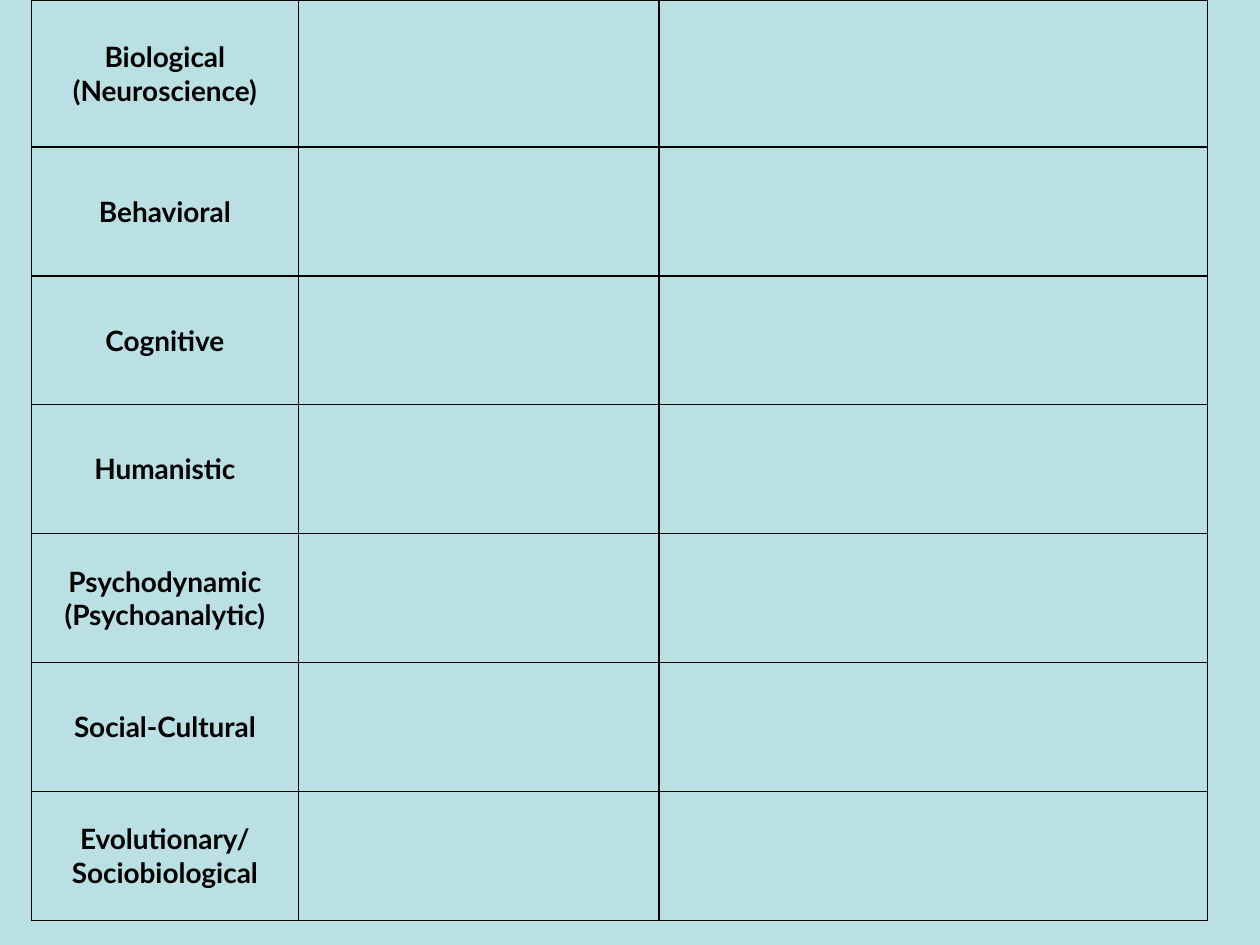
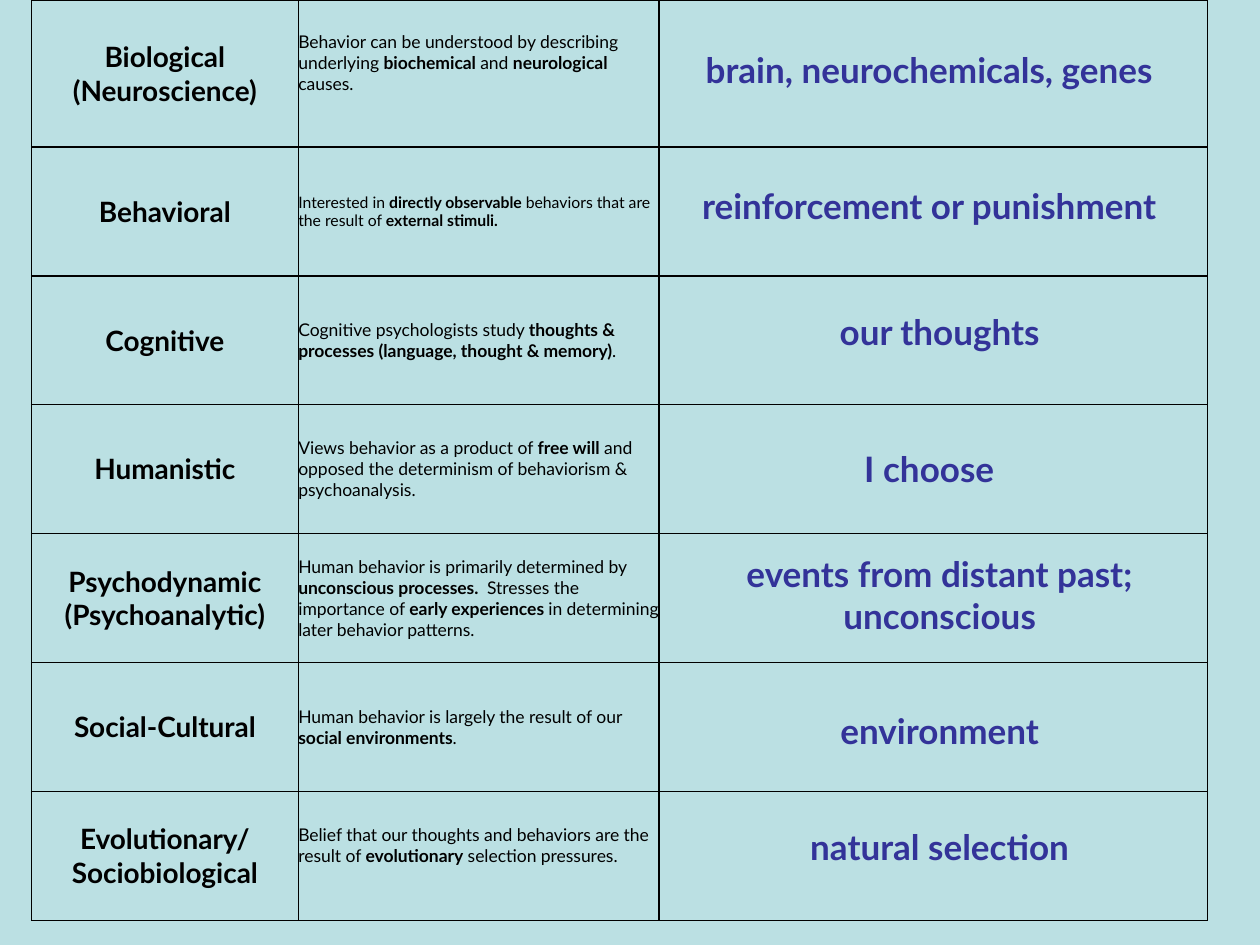
from lxml import etree
from pptx import Presentation
from pptx.dml.color import RGBColor
from pptx.enum import text
from pptx.oxml import ns
from pptx.util import Pt

FONT = "Lato"
BACKGROUND, INK, ACCENT = "BBE0E3", "000000", "333399"

# Table geometry, in points
TABLE_LEFT, TABLE_TOP = 18, 0
COLUMN_WIDTHS = (152.5, 206, 313.5)
TABLE_HEIGHT, FIRST_ROW = 526, 84

PERSPECTIVES = (
    "Biological\n(Neuroscience)",
    "Behavioral",
    "Cognitive",
    "Humanistic",
    "Psychodynamic\n(Psychoanalytic)",
    "Social-Cultural",
    "Evolutionary/\nSociobiological",
)

# Definition, text size, space below; asterisks enclose bold words
DEFINITIONS = (
    ("Behavior can be understood by describing underlying "
     "*biochemical *and *neurological* causes.", 10, 12),
    ("Interested in *directly observable* behaviors that are "
     "the result of *external stimuli.*", 9, 0),
    ("Cognitive psychologists study *thoughts & processes "
     "(language, thought & memory)*.", 10, 0),
    ("Views behavior as a product of *free will* and opposed "
     "the determinism of behaviorism & psychoanalysis.", 10, 0),
    ("Human behavior is primarily determined by *unconscious processes. * "
     "Stresses the importance of* early experiences *in determining "
     "later behavior patterns.", 10, 0),
    ("Human behavior is largely the result of our "
     "*social environments*.", 10, 0),
    ("Belief that our thoughts and behaviors are the result of "
     "*evolutionary* selection pressures.", 10, 12),
)

# Key phrase, left, top, height
KEY_PHRASES = (
    ("brain, neurochemicals, genes", 384, 24, 55),
    ("reinforcement or punishment", 384, 102, 55),
    ("our thoughts", 390, 174, 31),
    ("I choose", 384, 252, 31),
    ("events from distant past; unconscious", 390, 312, 55),
    ("environment", 390, 402, 31),
    ("natural selection", 390, 468, 31),
)
PHRASE_WIDTH = 294


def rgb(color):
    return RGBColor.from_string(color)


class Deck:
    def __init__(self):
        self.prs = Presentation()
        self.prs.slide_width, self.prs.slide_height = Pt(720), Pt(540)
        self.slide = None

    def add_slide(self):
        self.slide = self.prs.slides.add_slide(self.prs.slide_layouts[6])
        fill = self.slide.background.fill
        fill.solid()
        fill.fore_color.rgb = rgb(BACKGROUND)

    def fill_paragraph(self, p, content, size, color=INK, bold=None,
                       centered=True):
        """Add text; asterisks switch bold, newlines break lines."""
        p.alignment = text.PP_ALIGN.CENTER if centered else text.PP_ALIGN.LEFT
        p.font.name, p.font.size, p.font.bold = FONT, Pt(size), bold
        p.font.color.rgb = rgb(color)
        for i, part in enumerate(content.split("*")):
            for j, line in enumerate(part.split("\n")):
                if j:
                    p.add_line_break()
                if line:
                    r = p.add_run()
                    r.text = line
                    if i % 2:
                        r.font.bold = True

    def borders(self, cell):
        tc_pr = cell._tc.get_or_add_tcPr()
        for side in ("a:lnL", "a:lnR", "a:lnT", "a:lnB"):
            ln = etree.SubElement(tc_pr, ns.qn(side), w=str(Pt(1)))
            solid = etree.SubElement(ln, ns.qn("a:solidFill"))
            etree.SubElement(solid, ns.qn("a:srgbClr"), val=INK)

    def table(self):
        rows = len(PERSPECTIVES)
        table = self.slide.shapes.add_table(
            rows, len(COLUMN_WIDTHS), Pt(TABLE_LEFT), Pt(TABLE_TOP),
            Pt(sum(COLUMN_WIDTHS)), Pt(TABLE_HEIGHT)).table
        table.first_row = table.horz_banding = False
        for column, width in zip(table.columns, COLUMN_WIDTHS):
            column.width = Pt(width)
        for row in table.rows:
            row.height = Pt((TABLE_HEIGHT - FIRST_ROW) / (rows - 1))
        table.rows[0].height = Pt(FIRST_ROW)
        for cell in table.iter_cells():
            cell.margin_left = cell.margin_right = 0
            cell.margin_top = cell.margin_bottom = 0
            cell.vertical_anchor = text.MSO_ANCHOR.MIDDLE
            self.borders(cell)
            cell.fill.background()
        for i, name in enumerate(PERSPECTIVES):
            p = table.cell(i, 0).text_frame.paragraphs[0]
            self.fill_paragraph(p, name, 16, bold=True)
        return table

    def definitions(self, table):
        for i, (content, size, space_below) in enumerate(DEFINITIONS):
            cell = table.cell(i, 1)
            cell.margin_bottom = Pt(space_below)
            self.fill_paragraph(cell.text_frame.paragraphs[0], content, size,
                                centered=False)

    def key_phrase(self, content, left, top, height):
        sp = self.slide.shapes.add_textbox(
            Pt(left), Pt(top), Pt(PHRASE_WIDTH), Pt(height))
        tf = sp.text_frame
        tf.word_wrap = True
        self.fill_paragraph(tf.paragraphs[0], content, 20, ACCENT, bold=True)


def main():
    deck = Deck()

    # Slide 1: perspectives to be filled in
    deck.add_slide()
    deck.table()

    # Slide 2: perspectives with definitions and key phrases
    deck.add_slide()
    deck.definitions(deck.table())
    for phrase in KEY_PHRASES:
        deck.key_phrase(*phrase)

    deck.prs.save("out.pptx")


if __name__ == "__main__":
    main()
